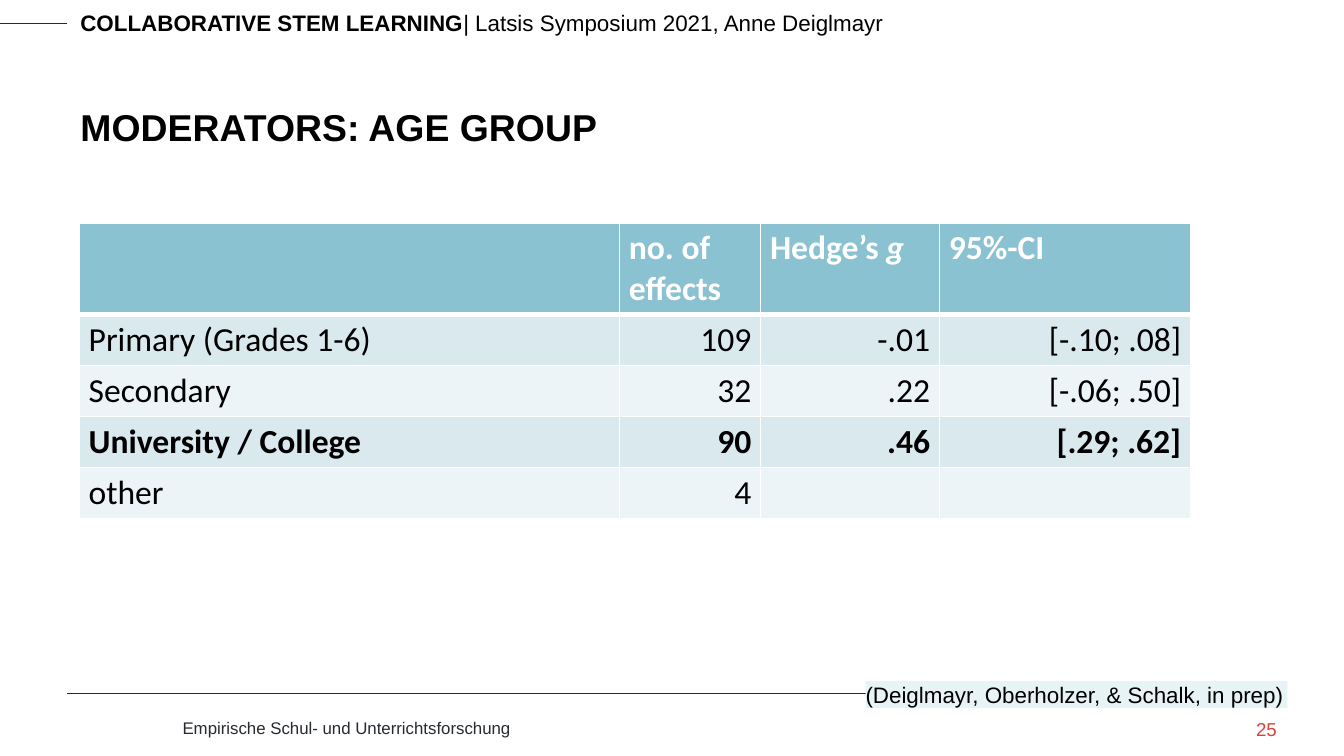
from lxml.etree import SubElement
from pptx import Presentation
from pptx.dml.color import RGBColor
from pptx.enum.shapes import MSO_CONNECTOR as Connector
from pptx.enum.text import MSO_ANCHOR as Anchor, PP_ALIGN as Align
from pptx.oxml.ns import qn
from pptx.util import Inches, Pt

BLACK = RGBColor(0x00, 0x00, 0x00)
WHITE = RGBColor(0xFF, 0xFF, 0xFF)
INK = RGBColor(0x26, 0x2A, 0x31)
RED = RGBColor(0xD8, 0x41, 0x3E)
TEAL = RGBColor(0x8A, 0xC2, 0xD1)
BANDS = [RGBColor(0xDA, 0xE9, 0xEE), RGBColor(0xED, 0xF4, 0xF7)]
PALE = RGBColor(0xE8, 0xF3, 0xF6)

deck = Presentation()
deck.slide_width, deck.slide_height = Inches(10), Inches(5.625)
COL, ROW = deck.slide_width / 100, deck.slide_height / 100
slide = deck.slides.add_slide(deck.slide_layouts[6])


def add_text(grid, runs, size, color, align=Align.LEFT, anchor=Anchor.TOP, inset=True):
    left, top, width, height = grid
    box = slide.shapes.add_textbox(int(left * COL), int(top * ROW), int(width * COL), int(height * ROW))
    frame = box.text_frame
    frame.word_wrap = True
    frame.vertical_anchor = anchor
    if not inset:
        frame.margin_left = frame.margin_right = frame.margin_top = frame.margin_bottom = 0
    paragraph = frame.paragraphs[0]
    paragraph.alignment = align
    for text, bold in runs:
        run = paragraph.add_run()
        run.text = text
        run.font.name, run.font.size, run.font.bold = "Arial", Pt(size), bold
        run.font.color.rgb = color
    return box


def set_borders(cell, bottom_width):
    properties = cell._tc.get_or_add_tcPr()
    for position, (side, width) in enumerate([("L", 1), ("R", 1), ("T", 1), ("B", bottom_width)]):
        edge = SubElement(properties, qn(f"a:ln{side}"), w=str(Pt(width)))
        properties.insert(position, edge)
        fill = SubElement(edge, qn("a:solidFill"))
        SubElement(fill, qn("a:srgbClr"), val=str(WHITE))


for start, end, height in [(0, 5, 3.05), (5, 95, 91.7)]:
    rule = slide.shapes.add_connector(
        Connector.STRAIGHT, int(start * COL), int(height * ROW), int(end * COL), int(height * ROW))
    rule.line.color.rgb = INK
    rule.line.width = Pt(0.25)
    SubElement(rule._element.spPr, qn("a:effectLst"))

add_text((5, 0.4, 76.6, 5.3),
         [("COLLABORATIVE STEM LEARNING", True), ("| Latsis Symposium 2021, Anne Deiglmayr", False)], 12, BLACK)
add_text((12.6, 94, 74.2, 4.4), [("Empirische Schul- und Unterrichtsforschung", False)], 9, INK)
add_text((5, 5.9, 90.1, 14.7), [("MODERATORS: AGE GROUP", True)], 20, BLACK, anchor=Anchor.BOTTOM)
add_text((86.9, 95, 8.1, 3.9), [("25", False)], 10, RED, align=Align.RIGHT, inset=False)

effects = [
    ["", "no. of effects", "Hedge’s g", "95%-CI"],
    ["Primary (Grades 1-6)", "109", "-.01", "[-.10; .08]"],
    ["Secondary", "32", ".22", "[-.06; .50]"],
    ["University / College", "90", ".46", "[.29; .62]"],
    ["other", "4", "", ""],
]
column_spans = [40.2, 10.5, 13.3, 18.7]
row_spans = [12.1] + [6.76] * 4
table = slide.shapes.add_table(
    len(row_spans), len(column_spans), int(5.9 * COL), int(29.5 * ROW),
    int(sum(column_spans) * COL), int(sum(row_spans) * ROW)).table
for column, span in zip(table.columns, column_spans):
    column.width = int(span * COL)
for row, span in zip(table.rows, row_spans):
    row.height = int(span * ROW)

for r, values in enumerate(effects):
    is_header = r == 0
    for c, value in enumerate(values):
        cell = table.cell(r, c)
        cell.fill.solid()
        cell.fill.fore_color.rgb = TEAL if is_header else BANDS[(r - 1) % 2]
        set_borders(cell, 3 if is_header else 1)
        cell.margin_left = cell.margin_right = int(0.7 * COL)
        cell.margin_top = cell.margin_bottom = int(0.65 * ROW)
        paragraph = cell.text_frame.paragraphs[0]
        paragraph.alignment = Align.LEFT if is_header or c == 0 else Align.RIGHT
        paragraph.font.size = Pt(18)
        symbol = "g" if value.endswith(" g") else ""
        for part in filter(None, [value.removesuffix(symbol), symbol]):
            run = paragraph.add_run()
            run.text = part
            run.font.name, run.font.size = "Calibri", Pt(18)
            run.font.bold = is_header or values[0] == "University / College"
            run.font.italic = part == symbol
            run.font.color.rgb = WHITE if is_header else BLACK

citation = add_text((64.4, 90.1, 31.4, 3.6), [("(Deiglmayr, Oberholzer, & Schalk, in prep)", False)],
                    12, BLACK, anchor=Anchor.MIDDLE, inset=False)
citation.text_frame.word_wrap = False
citation.fill.solid()
citation.fill.fore_color.rgb = PALE

deck.save("out.pptx")
